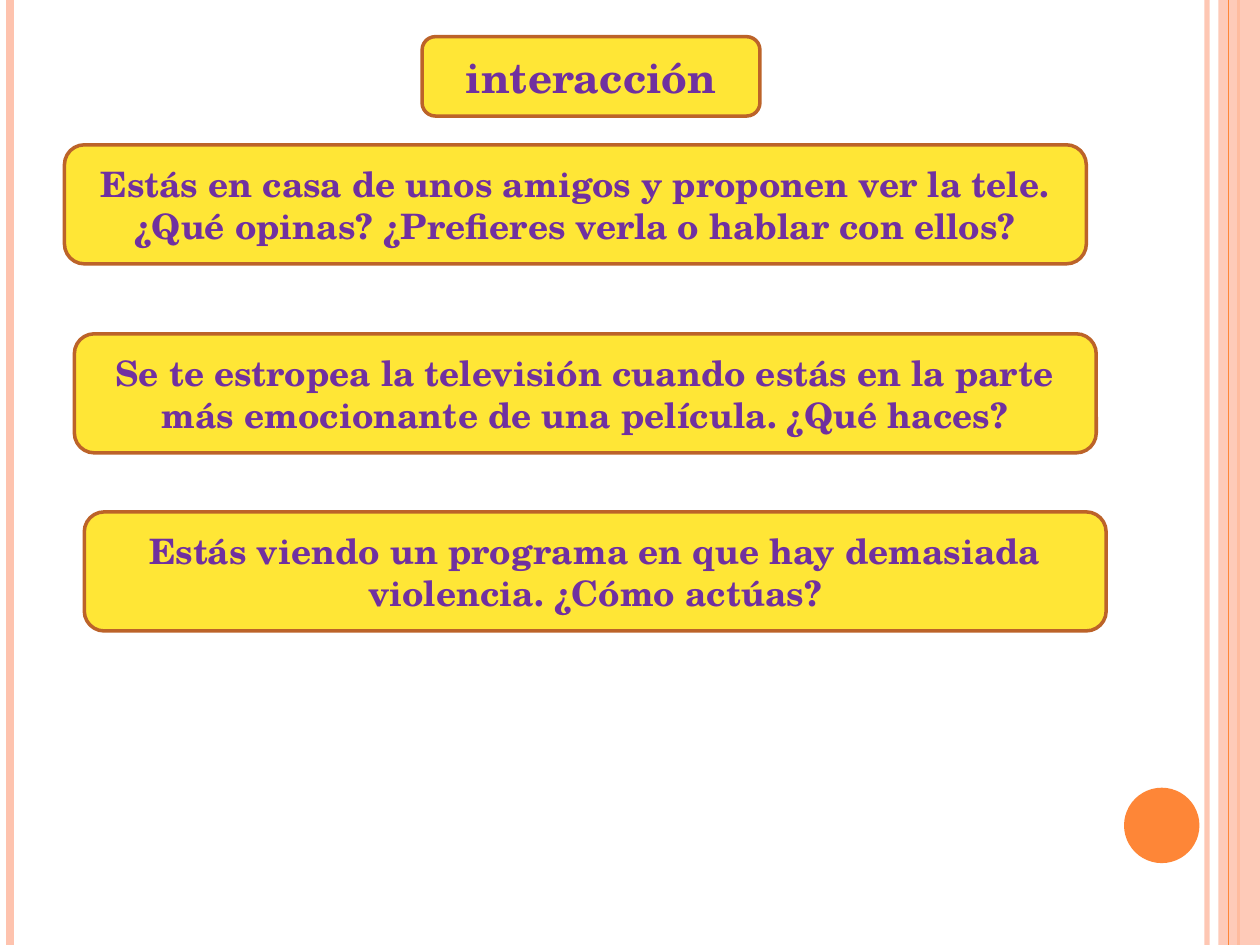
import lxml.etree
import pptx
import pptx.dml.color
import pptx.enum.shapes
import pptx.enum.text
import pptx.oxml.ns
import pptx.util

Cm = pptx.util.Cm
Pt = pptx.util.Pt
SHAPES = pptx.enum.shapes.MSO_SHAPE
qn = pptx.oxml.ns.qn


def paint(color_format, hex_color, opacity=100):
    color_format.rgb = pptx.dml.color.RGBColor.from_string(hex_color)
    if opacity < 100:
        for color in color_format._xFill.iter(qn("a:srgbClr")):
            alpha = lxml.etree.SubElement(color, qn("a:alpha"))
            alpha.set("val", str(opacity * 1000))


def add_stripe(x, hex_color, width, opacity=100):
    stripe = page.shapes.add_connector(
        pptx.enum.shapes.MSO_CONNECTOR.STRAIGHT, Cm(x), 0, Cm(x), deck.slide_height)
    stripe.line.width = Pt(width)
    stripe.line.fill.solid()
    paint(stripe.line.fill.fore_color, hex_color)
    if opacity < 100:
        color = stripe.line._ln.find(".//" + qn("a:srgbClr"))
        lxml.etree.SubElement(color, qn("a:alpha")).set("val", str(opacity * 1000))
    lxml.etree.SubElement(stripe._element.spPr, qn("a:effectLst"))


deck = pptx.Presentation()
deck.slide_width = Cm(25.4)
deck.slide_height = Cm(19.05)
page = deck.slides.add_slide(deck.slide_layouts[6])

# Stripes behind the side band
add_stripe(24.33, "FEC3AE", 3, 93)
add_stripe(0.2, "FEC3AE", 4.5)
add_stripe(24.97, "FE8637", 1.5)

# Translucent side band
band = page.shapes.add_shape(SHAPES.RECTANGLE, Cm(24.56), 0, Cm(0.84), deck.slide_height)
band.shadow.inherit = False
band.line.fill.background()
band.fill.solid()
paint(band.fill.fore_color, "FEC3AE")
band_color = band._element.spPr.find(".//" + qn("a:srgbClr"))
lxml.etree.SubElement(band_color, qn("a:alpha")).set("val", "87000")

# Thin stripe over the band, and the disc
add_stripe(24.77, "FE8637", 0.75)
disc = page.shapes.add_shape(SHAPES.OVAL, Cm(22.66), Cm(15.88), Cm(1.52), Cm(1.52))
disc.shadow.inherit = False
disc.line.fill.background()
disc.fill.solid()
paint(disc.fill.fore_color, "FE8637")

# Title and the three situations: left, top, width, height, size, text
cards = [
    (8.51, 0.74, 6.81, 1.6, 24, "interacción"),
    (1.3, 2.92, 20.6, 2.4, 20,
     "Estás en casa de unos amigos y proponen ver la tele. "
     "¿Qué opinas? ¿Prefieres verla o hablar con ellos?"),
    (1.5, 6.73, 20.6, 2.4, 20,
     "Se te estropea la televisión cuando estás en la parte "
     "más emocionante de una película. ¿Qué haces?"),
    (1.7, 10.32, 20.6, 2.4, 20,
     "Estás viendo un programa en que hay demasiada violencia. ¿Cómo actúas?"),
]
for left, top, width, height, size, text in cards:
    box = page.shapes.add_shape(
        SHAPES.ROUNDED_RECTANGLE, Cm(left), Cm(top), Cm(width), Cm(height))
    box.shadow.inherit = False
    box.fill.solid()
    paint(box.fill.fore_color, "FFE636")
    box.line.width = Pt(2)
    paint(box.line.color, "BC6329")
    frame = box.text_frame
    frame.word_wrap = True
    frame.vertical_anchor = pptx.enum.text.MSO_ANCHOR.MIDDLE
    para = frame.paragraphs[0]
    para.alignment = pptx.enum.text.PP_ALIGN.CENTER
    span = para.add_run()
    span.text = text
    span.font.name = "TeX Gyre Schola"
    span.font.size = Pt(size)
    span.font.bold = True
    paint(span.font.color, "7030A0")

deck.save("out.pptx")
